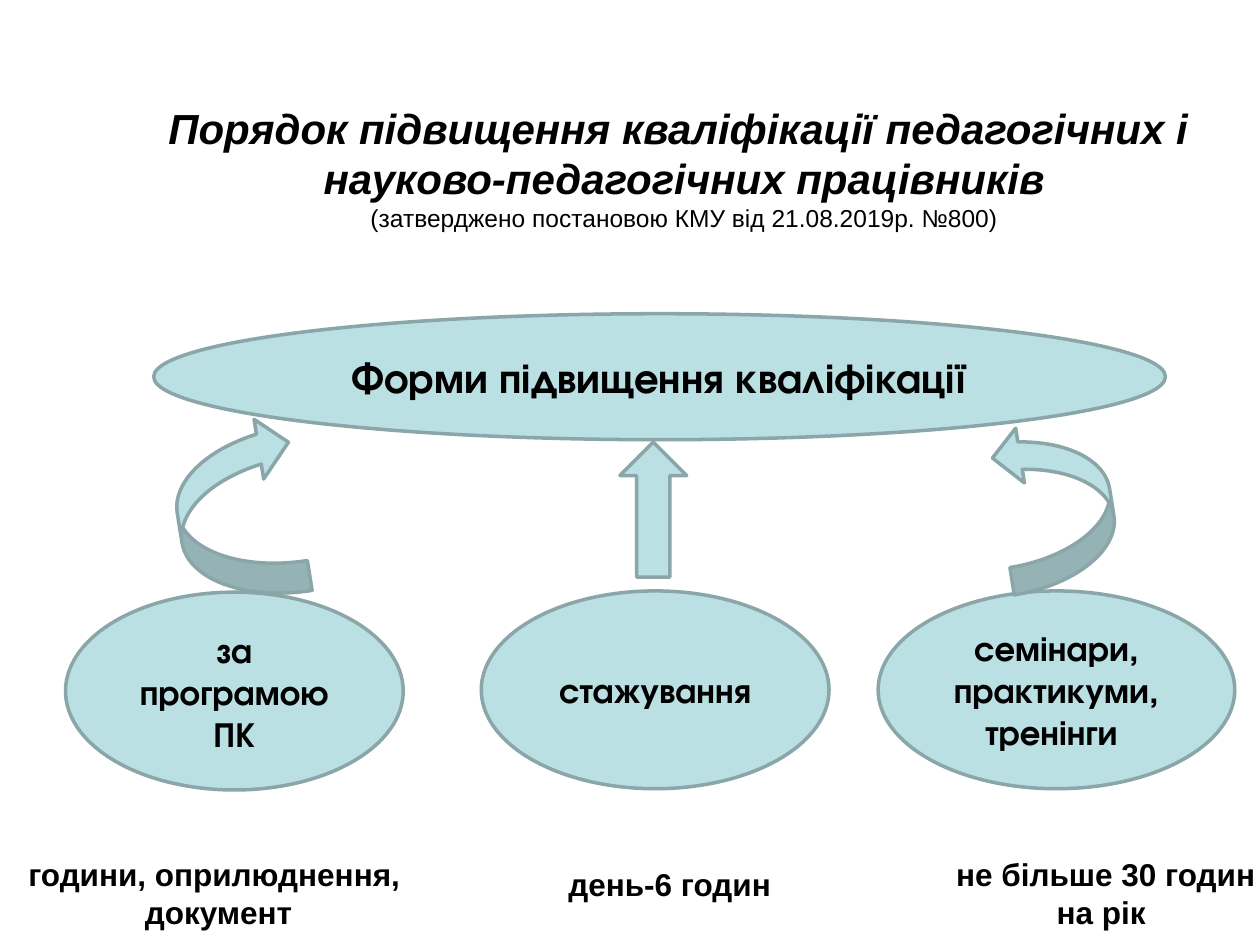
from pptx import Presentation
from pptx.dml.color import RGBColor
from pptx.enum.shapes import MSO_SHAPE
from pptx.enum.text import MSO_ANCHOR, PP_ALIGN
from pptx.oxml.ns import qn
from pptx.util import Inches, Pt

COLORS = {"fill": "BBE0E3", "line": "8AA6A8", "text": "000000"}


def write(frame, lines, font_name, size, anchor):
    frame.word_wrap = True
    frame.vertical_anchor = anchor
    frame.text = "\n".join(lines)
    for paragraph in frame.paragraphs:
        paragraph.alignment = PP_ALIGN.CENTER
        font = paragraph.font
        font.name, font.size, font.bold = font_name, Pt(size), True
        font.color.rgb = RGBColor.from_string(COLORS["text"])


def add_figure(kind, left, top, width, height):
    figure = slide.shapes.add_shape(
        kind, Inches(left), Inches(top), Inches(width), Inches(height))
    figure.shadow.inherit = False
    figure.fill.solid()
    figure.fill.fore_color.rgb = RGBColor.from_string(COLORS["fill"])
    figure.line.color.rgb = RGBColor.from_string(COLORS["line"])
    figure.line.width = Pt(2)
    return figure


prs = Presentation()
prs.slide_width, prs.slide_height = Inches(10), Inches(7.5)
slide = prs.slides.add_slide(prs.slide_layouts[5])

# Title, with the decree in a smaller plain line
title = slide.shapes.title
title.left, title.top = Inches(1.06), Inches(0.76)
title.width, title.height = Inches(8.74), Inches(1.14)
write(title.text_frame,
      ["Порядок підвищення кваліфікації педагогічних і ",
       "науково-педагогічних працівників",
       "(затверджено постановою КМУ від 21.08.2019р. №800)"],
      "Arial", 24, MSO_ANCHOR.TOP)
for paragraph in title.text_frame.paragraphs:
    paragraph.space_before = Pt(0)
    paragraph.font.italic = True
decree = title.text_frame.paragraphs[-1].font
decree.size, decree.bold, decree.italic = Pt(14), False, False

# Main topic
topic = add_figure(MSO_SHAPE.OVAL, 1.22, 2.49, 8.03, 1)
write(topic.text_frame, ["Форми підвищення кваліфікації"],
      "TeX Gyre Adventor", 24, MSO_ANCHOR.MIDDLE)

# Forms of training
for left, top, width, lines in [
    (3.82, 4.69, 2.76, ["стажування"]),
    (0.52, 4.7, 2.68, ["за програмою ПК"]),
    (6.97, 4.69, 2.83, ["семінари, практикуми,", "тренінги "]),
]:
    training = add_figure(MSO_SHAPE.FLOWCHART_CONNECTOR, left, top, width, 1.57)
    write(training.text_frame, lines, "TeX Gyre Adventor", 20, MSO_ANCHOR.MIDDLE)

# Arrows up to the topic
for left, width, height, mirrored in [(7.94, 0.88, 1.32, False),
                                      (1.41, 0.96, 1.43, True)]:
    curved_arrow = add_figure(MSO_SHAPE.CURVED_RIGHT_ARROW, left, 3.34, width, height)
    curved_arrow.rotation = 170.9
    if mirrored:
        curved_arrow._element.spPr.find(qn("a:xfrm")).set("flipH", "1")
add_figure(MSO_SHAPE.UP_ARROW, 4.92, 3.51, 0.53, 1.07)

# Conditions under each form
for left, top, width, height, lines in [
    (-0.43, 6.74, 4.33, 0.71, ["години, оприлюднення, ", "документ"]),
    (3.9, 6.82, 2.83, 0.4, ["день-6 годин"]),
    (7.44, 6.74, 2.67, 0.71, ["не більше 30 годин на рік "]),
]:
    condition = slide.shapes.add_textbox(
        Inches(left), Inches(top), Inches(width), Inches(height))
    write(condition.text_frame, lines, "Arial", 18, MSO_ANCHOR.TOP)

prs.save("out.pptx")
